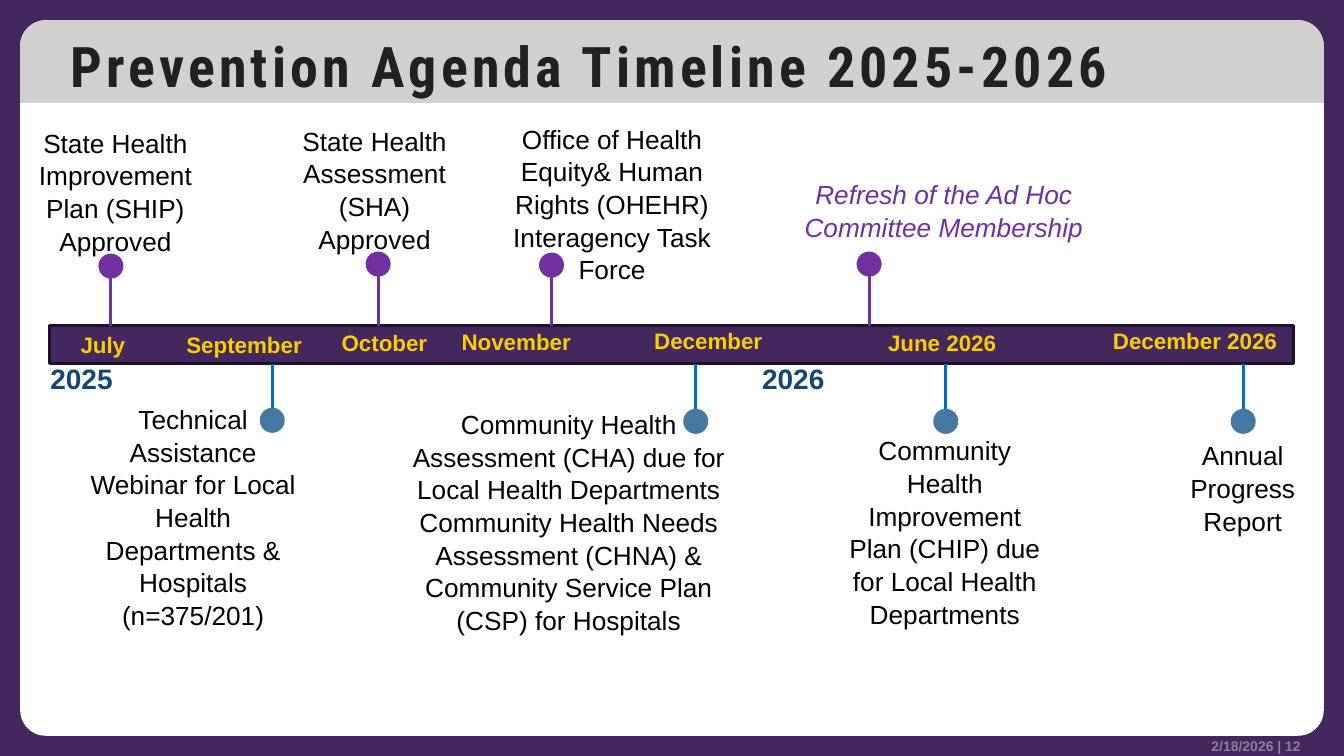
from pptx import Presentation
from pptx.dml.color import RGBColor
from pptx.enum.shapes import MSO_CONNECTOR, MSO_SHAPE
from pptx.enum.text import MSO_ANCHOR, MSO_AUTO_SIZE, PP_ALIGN
from pptx.oxml.ns import qn
from pptx.util import Inches, Pt
from lxml import etree

TITLE = "Prevention Agenda Timeline 2025-2026"
FOOTER = "2/18/2026 | 12"

MONTHS = [
    ("July", 0.7, 3.24, 0.68),
    ("September", 1.75, 3.24, 1.36),
    ("October", 3.29, 3.22, 1.36),
    ("November", 4.48, 3.21, 1.87),
    ("December", 6.39, 3.2, 2.47),
    ("June 2026", 8.71, 3.22, 2.47),
    ("December 2026", 10.94, 3.2, 1.95),
]
YEARS = [("2025", 0.4), ("2026", 7.46)]

EVENTS = [
    (["State Health Improvement Plan (SHIP) Approved"], 0.28, 1.2, 1.73, 1.36),
    (["State Health Assessment (SHA) Approved"], 2.85, 1.18, 1.73, 1.36),
    (["Office of Health Equity& Human Rights (OHEHR) Interagency Task Force"],
     4.71, 1.16, 2.72, 1.67),
    (["Technical Assistance Webinar for Local Health Departments & Hospitals (n=375/201)"],
     0.71, 3.94, 2.41, 2.3),
    (["Community Health Assessment (CHA) due for Local Health Departments",
      "Community Health Needs Assessment (CHNA) & Community Service Plan (CSP) for Hospitals"],
     3.93, 3.99, 3.42, 2.3),
    (["Community Health Improvement Plan (CHIP) due for Local Health Departments"],
     8.31, 4.25, 2.12, 1.99),
    (["Annual Progress Report"], 11.5, 4.3, 1.65, 1.04),
]
REFRESH = (["Refresh of the Ad Hoc Committee Membership"], 7.74, 1.71, 3.24, 0.73)

PINS_ABOVE = [(1.1, 2.64), (3.75, 2.62), (5.47, 2.63), (8.62, 2.62)]
PINS_BELOW = [(2.7, 4.17), (6.9, 4.18), (9.38, 4.18), (12.33, 4.18)]
BAR_TOP, BAR_HEIGHT = 3.23, 0.38
DOT = 0.22

PLUM = RGBColor(0x43, 0x27, 0x5D)
DARK_PLUM = RGBColor(0x1D, 0x11, 0x29)
WHITE = RGBColor(0xFF, 0xFF, 0xFF)
GRAY = RGBColor(0xD0, 0xD0, 0xCE)
LAVENDER = RGBColor(0x8B, 0x7F, 0xA0)
CHARCOAL = RGBColor(0x21, 0x21, 0x21)
BLACK = RGBColor(0, 0, 0)
GOLD = RGBColor(0xF9, 0xCD, 0x00)
NAVY = RGBColor(0x14, 0x48, 0x72)
PURPLE = RGBColor(0x70, 0x30, 0xA0)
BLUE = RGBColor(0x00, 0x70, 0xC0)
STEEL = RGBColor(0x45, 0x79, 0xA4)


def add_box(s, kind, x, y, w, h, fill, line=None):
    sp = s.shapes.add_shape(kind, Inches(x), Inches(y), Inches(w), Inches(h))
    sp.shadow.inherit = False
    sp.fill.solid()
    sp.fill.fore_color.rgb = fill
    if line is None:
        sp.line.fill.background()
    else:
        sp.line.color.rgb = line
        sp.line.width = Pt(2)
    return sp


def style(p, size, color, name="Arial", bold=False, italic=False):
    font = p.font
    font.size, font.name, font.bold, font.italic = Pt(size), name, bold, italic
    font.color.rgb = color


def add_text(s, lines, x, y, w, h, size, color, align=PP_ALIGN.LEFT,
             bold=False, italic=False, spacing=None):
    tf = s.shapes.add_textbox(Inches(x), Inches(y), Inches(w), Inches(h)).text_frame
    tf.word_wrap = True
    tf.text = "\n".join(lines)
    for p in tf.paragraphs:
        p.alignment = align
        p.line_spacing = spacing
        style(p, size, color, bold=bold, italic=italic)
    return tf


def add_pin(s, x, dot_y, bar_y, line_color, dot_color):
    toward_bar = DOT / 2 if bar_y > dot_y else -DOT / 2
    line = s.shapes.add_connector(MSO_CONNECTOR.STRAIGHT, Inches(x), Inches(bar_y),
                                  Inches(x), Inches(dot_y + toward_bar))
    line.line.color.rgb = line_color
    line.line.width = Pt(2.25)
    etree.SubElement(line._element.spPr, qn("a:effectLst"))
    add_box(s, MSO_SHAPE.OVAL, x - DOT / 2, dot_y - DOT / 2, DOT, DOT, dot_color, dot_color)


def add_frame(s):
    s.background.fill.solid()
    s.background.fill.fore_color.rgb = PLUM
    panel = add_box(s, MSO_SHAPE.ROUNDED_RECTANGLE, 0.2, 0.2, 12.93, 7.1, WHITE)
    panel.adjustments[0] = 0.036
    header = add_box(s, MSO_SHAPE.ROUND_2_SAME_RECTANGLE, 0.2, 0.2, 12.93, 0.82, GRAY)
    header.adjustments[0] = 0.315
    tf = add_text(s, [FOOTER], 8.19, 7.31, 4.71, 0.17, 10, LAVENDER, PP_ALIGN.RIGHT, bold=True)
    tf.margin_left = tf.margin_right = tf.margin_top = tf.margin_bottom = 0
    tf.vertical_anchor = MSO_ANCHOR.BOTTOM


def add_title(s):
    title = s.shapes.title
    s.shapes._spTree.append(title._element)
    title.left, title.top = Inches(0.2), Inches(0.26)
    title.width, title.height = Inches(12.93), Inches(0.77)
    tf = title.text_frame
    tf.text = TITLE
    tf.word_wrap = True
    tf.auto_size = MSO_AUTO_SIZE.NONE
    tf.vertical_anchor = MSO_ANCHOR.MIDDLE
    tf.margin_left = tf.margin_right = Inches(0.5)
    p = tf.paragraphs[0]
    p.alignment = PP_ALIGN.LEFT
    style(p, 40, CHARCOAL, "Roboto Condensed", bold=True)
    p.runs[0]._r.get_or_add_rPr().set("spc", "300")


def main():
    prs = Presentation()
    prs.slide_width, prs.slide_height = Inches(13.33), Inches(7.5)
    s = prs.slides.add_slide(prs.slide_layouts[5])
    add_frame(s)
    add_title(s)
    add_box(s, MSO_SHAPE.RECTANGLE, 0.49, BAR_TOP, 12.34, BAR_HEIGHT, PLUM, DARK_PLUM)
    for x, y in PINS_ABOVE:
        add_pin(s, x, y, BAR_TOP, PURPLE, PURPLE)
    for x, y in PINS_BELOW:
        add_pin(s, x, y, BAR_TOP + BAR_HEIGHT, BLUE, STEEL)
    for month, x, y, w in MONTHS:
        add_text(s, [month], x, y, w, 0.37, 16, GOLD, bold=True)
    for year, x in YEARS:
        add_text(s, [year], x, 3.54, 0.98, 0.44, 20, NAVY, bold=True)
    for event in EVENTS:
        add_text(s, *event, 18.7, BLACK, PP_ALIGN.CENTER, spacing=1.04)
    add_text(s, *REFRESH, 18.7, PURPLE, PP_ALIGN.CENTER, italic=True, spacing=1.04)
    prs.save("out.pptx")


if __name__ == "__main__":
    main()
